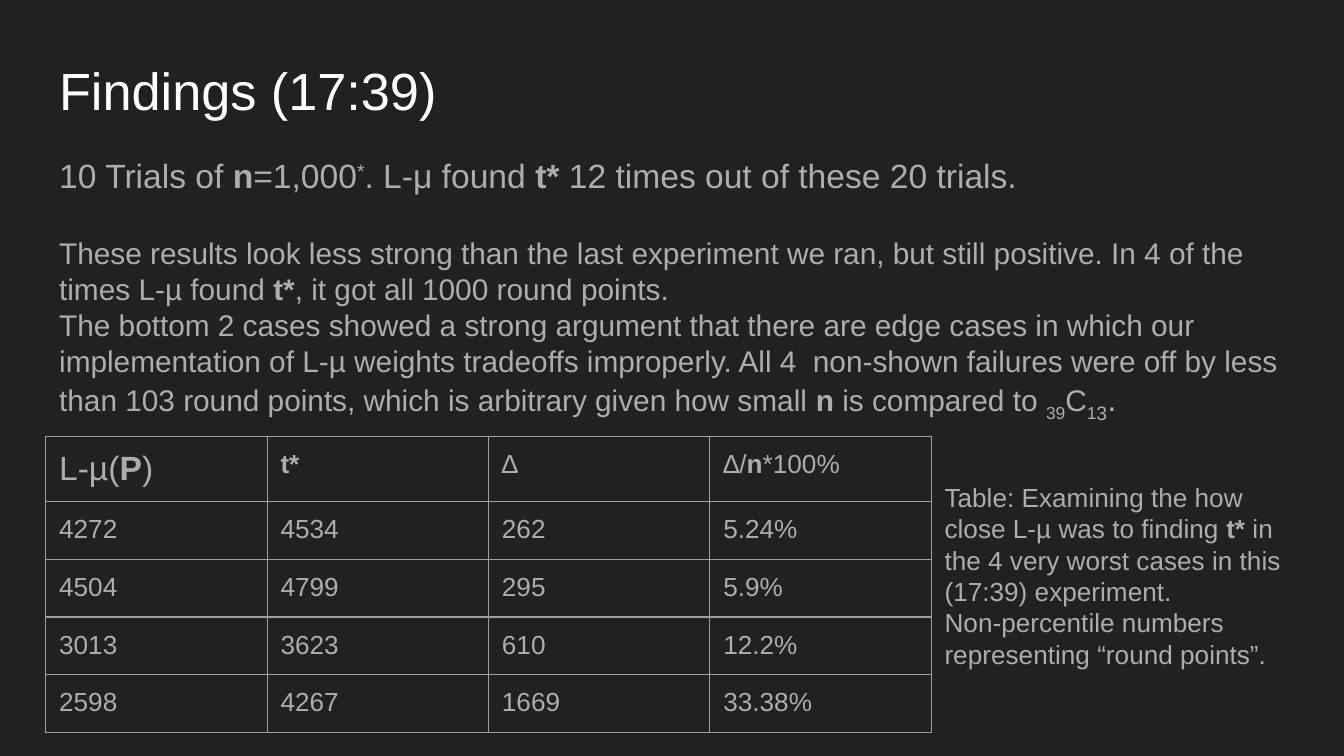
import pptx
import pptx.dml.color
import pptx.enum.text
import pptx.oxml
import pptx.oxml.ns
import pptx.util

Inches = pptx.util.Inches
Pt = pptx.util.Pt
COLORS = {"back": "212121", "title": "FFFFFF", "text": "ADADAD", "line": "9E9E9E"}
BOLD = {"bold": True}
SUB = {"base": -25}
PAD = 0.1
FRAME = {
    "word_wrap": True,
    "auto_size": pptx.enum.text.MSO_AUTO_SIZE.NONE,
    "vertical_anchor": pptx.enum.text.MSO_ANCHOR.TOP,
    "margin_left": Inches(PAD),
    "margin_right": Inches(PAD),
    "margin_top": Inches(PAD),
    "margin_bottom": Inches(PAD),
}
PARA = {
    "alignment": pptx.enum.text.PP_ALIGN.LEFT,
    "space_before": Pt(0),
    "space_after": Pt(0),
    "line_spacing": 1.0,
}

LEAD = [
    ("10 Trials of ", {}), ("n", BOLD), ("=1,000", {}), ("*", {"base": 30}),
    (". L-μ found ", {}), ("t*", BOLD), (" 12 times out of these 20 trials.", {}),
]
RESULT = [
    ("These results look less strong than the last experiment we ran, but still "
     "positive. In 4 of the times L-µ found ", {}),
    ("t*", BOLD), (", it got all 1000 round points.", {}),
]
EDGE = [
    ("The bottom 2 cases showed a strong argument that there are edge cases in which "
     "our implementation of L-µ weights tradeoffs improperly. All 4  non-shown failures "
     "were off by less than 103 round points, which is arbitrary given how small ", {}),
    ("n", BOLD), (" is compared to ", {}), ("39", SUB), ("C", {}), ("1", SUB),
    ("3", {"base": -25, "size": Pt(18)}), (".", {"size": Pt(18)}),
]
HEAD = [
    [("L-µ(", {"size": Pt(18)}), ("P", {"bold": True, "size": Pt(18)}),
     (")", {"size": Pt(18)})],
    [("t*", BOLD)],
    [("∆", {})],
    [("∆/", {}), ("n", BOLD), ("*100%", {})],
]
ROWS = [
    ["4272", "4534", "262", "5.24%"],
    ["4504", "4799", "295", "5.9%"],
    ["3013", "3623", "610", "12.2%"],
    ["2598", "4267", "1669", "33.38%"],
]
NOTE = [
    [("Table: Examining the how close L-µ was to finding ", {}), ("t*", BOLD),
     (" in the 4 very worst cases in this (17:39) experiment.", {})],
    [("Non-percentile numbers representing “round points”.", {})],
]


def rgb(key):
    """Return the named colour."""
    return pptx.dml.color.RGBColor.from_string(COLORS[key])


def apply(item, form):
    """Set each format value on the item."""
    for name, value in form.items():
        setattr(item, name, value)


def place(shape, box):
    """Move a shape to a box in inches."""
    names = ("left", "top", "width", "height")
    apply(shape, dict(zip(names, map(Inches, box))))


def write(para, runs, size, color="text", **form):
    """Fill a paragraph with formatted runs."""
    apply(para, {**PARA, **form})
    props = para._p.get_or_add_pPr()
    props.set("marL", "0")
    props.set("indent", "0")
    props.append(props.makeelement(pptx.oxml.ns.qn("a:buNone"), {}))
    for text, extra in runs:
        run = para.add_run()
        run.text = text
        look = {"name": "Arial", "size": Pt(size), "bold": False, **extra}
        base = look.pop("base", 0)
        apply(run.font, look)
        run.font.color.rgb = rgb(color)
        if base:
            run._r.get_or_add_rPr().set("baseline", str(base * 1000))


def edge(cell):
    """Draw the four borders of a cell."""
    props = cell._tc.get_or_add_tcPr()
    for spot, side in enumerate("LRTB"):
        line = pptx.oxml.parse_xml(
            f'<a:ln{side} {pptx.oxml.ns.nsdecls("a")} w="{Pt(0.75)}"><a:solidFill>'
            f'<a:srgbClr val="{COLORS["line"]}"/></a:solidFill></a:ln{side}>')
        props.insert(spot, line)


def title(slide, box):
    """Place the slide title."""
    shape = slide.shapes.title
    place(shape, box)
    apply(shape.text_frame, FRAME)
    write(shape.text_frame.paragraphs[0], [("Findings (17:39)", {})], 28, "title")


def body(slide, box):
    """Place the findings text."""
    shape = slide.placeholders[1]
    place(shape, box)
    frame = shape.text_frame
    apply(frame, FRAME)
    write(frame.paragraphs[0], LEAD, 18)
    for runs, gap in ((RESULT, 21.5), (EDGE, 0)):
        write(frame.add_paragraph(), runs, 16, space_before=Pt(gap))


def table(slide, box):
    """Place the grid of worst cases."""
    data = HEAD + [[(text, {})] for row in ROWS for text in row]
    wide = len(HEAD)
    grid = slide.shapes.add_table(len(ROWS) + 1, wide, *map(Inches, box)).table
    apply(grid, {"first_row": False, "horz_banding": False})
    for col in grid.columns:
        col.width = Inches(box[2] / wide)
    for spot, row in enumerate(grid.rows):
        row.height = Inches(0.43 if spot else 0.44)
    sides = {key: val for key, val in FRAME.items() if key.startswith("margin")}
    for cell, runs in zip(grid.iter_cells(), data):
        apply(cell, sides)
        cell.fill.background()
        edge(cell)
        write(cell.text_frame.paragraphs[0], runs, 14)


def note(slide, box):
    """Place the caption beside the table."""
    frame = slide.shapes.add_textbox(*map(Inches, box)).text_frame
    apply(frame, {**FRAME, "margin_top": Inches(PAD + 0.23)})
    for spot, runs in enumerate(NOTE):
        para = frame.add_paragraph() if spot else frame.paragraphs[0]
        write(para, runs, 14)


def main():
    """Build and save the slide."""
    deck = pptx.Presentation()
    apply(deck, {"slide_width": Inches(10), "slide_height": Inches(10 * 9 / 16)})
    slide = deck.slides.add_slide(deck.slide_layouts[1])
    fill = slide.background.fill
    fill.solid()
    fill.fore_color.rgb = rgb("back")
    title(slide, (0.34, 0.33, 9.32, 0.63))
    body(slide, (0.34, 1.05, 9.32, 3.74))
    table(slide, (0.34, 3.25, 6.59, 2.16))
    note(slide, (6.93, 3.25, 2.73, 2.22))
    deck.save("out.pptx")


if __name__ == "__main__":
    main()
